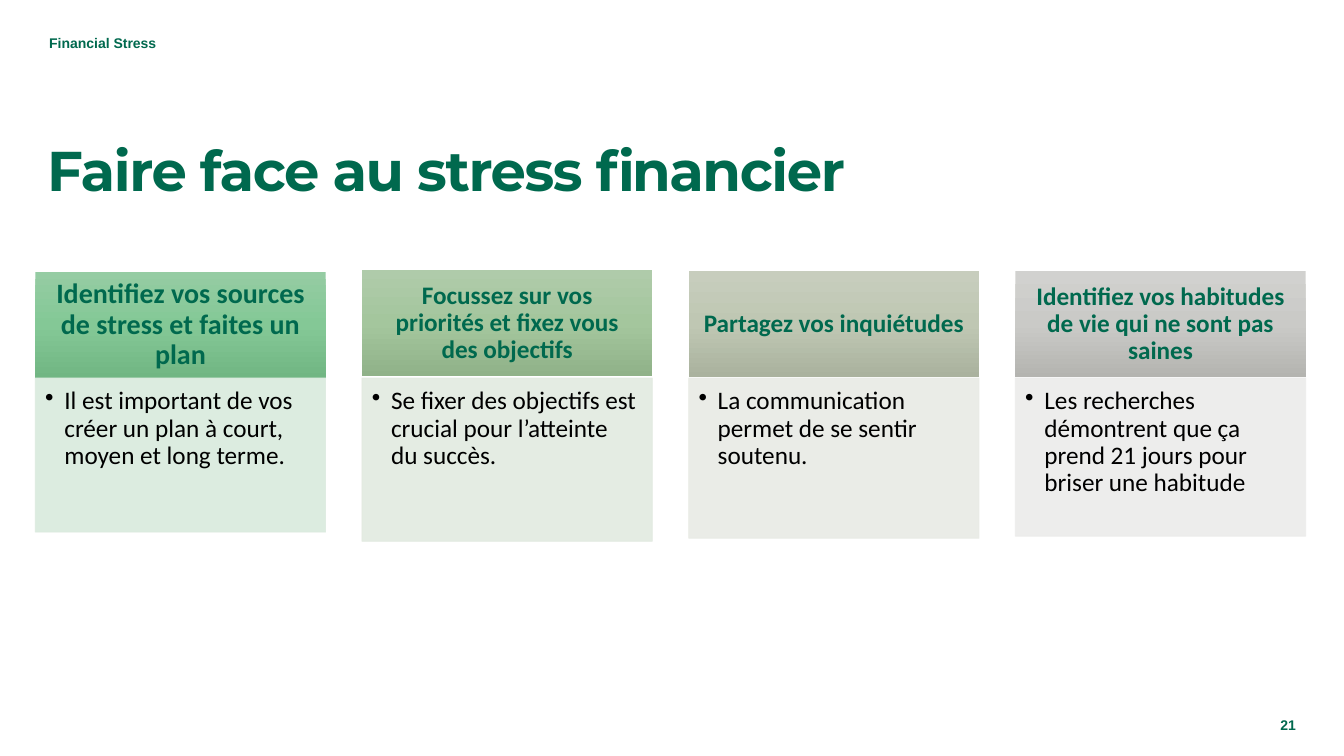
"""Build the slide on coping with financial stress."""
from pptx import Presentation
from pptx.dml.color import RGBColor
from pptx.enum.shapes import MSO_SHAPE
from pptx.enum.text import MSO_ANCHOR, PP_ALIGN
from pptx.oxml import parse_xml
from pptx.oxml.ns import nsdecls, qn
from pptx.util import Inches, Pt

THEME = {
    "green": "00694E", "black": "000000",
    "note": 10, "title": 40, "head": 18, "lead": 20, "body": 18,
    "sans": "Arial", "text": "Calibri", "show": "Montserrat",
    "tints": [
        (("95CCA3", "84C896", "71B683"), "D9EADD"),
        (("AFCBAA", "A4C69D", "90B289"), "E2EAE0"),
        (("C7CDBD", "BFC7B3", "AAB29E"), "E8EBE5"),
        (("D1D1CF", "CACAC7", "B4B4B0"), "ECECEB"),
    ],
}


def write(shape, text, size, face, color="green", bold=True, pads=(0.1, 0.05, 0.1, 0.05),
          anchor=MSO_ANCHOR.TOP, align=PP_ALIGN.LEFT, space=1.0, bullet=False):
    """Put one formatted paragraph in a shape."""
    frame = shape.text_frame
    frame.word_wrap = True
    frame.vertical_anchor = anchor
    for side, pad in zip(("left", "top", "right", "bottom"), pads):
        setattr(frame, f"margin_{side}", Inches(pad))
    para = frame.paragraphs[0]
    if bullet:
        props = para._p.get_or_add_pPr()
        props.set("marL", str(Inches(0.19)))
        props.set("indent", str(Inches(-0.19)))
        props.append(parse_xml(f'<a:buChar {nsdecls("a")} char="•"/>'))
    for name, value in {"alignment": align, "line_spacing": space}.items():
        setattr(para, name, value)
    run = para.add_run()
    run.text = text
    for name, value in {"size": Pt(THEME[size]), "name": THEME[face], "bold": bold}.items():
        setattr(run.font, name, value)
    run.font.color.rgb = RGBColor.from_string(THEME[color])
    return run


def place(kind, left, top, width, height):
    """Add a text box, or a rectangle without shadow."""
    area = [Inches(n) for n in (left, top, width, height)]
    if kind == "text":
        return slide.shapes.add_textbox(*area)
    shape = slide.shapes.add_shape(MSO_SHAPE.RECTANGLE, *area)
    shape.shadow.inherit = False
    return shape


deck = Presentation()
deck.slide_width, deck.slide_height = Inches(13.33), Inches(7.5)
slide = deck.slides.add_slide(deck.slide_layouts[6])

write(place("text", 0.39, 0.31, 6.27, 0.31), "Financial Stress", "note", "sans",
      pads=(0.1, 0.05, 0, 0), space=0.9)
write(place("text", 11.93, 7.07, 1.02, 0.25), "21", "note", "sans",
      anchor=MSO_ANCHOR.MIDDLE, align=PP_ALIGN.RIGHT)
title = write(place("text", 0.37, 0.62, 12.6, 1.44), "Faire face au stress financier",
              "title", "show", anchor=MSO_ANCHOR.BOTTOM)
title.font._element.set("spc", "-100")

cards = [
    ("Identifiez vos sources de stress et faites un plan", "lead", 2.7,
     "Il est important de vos créer un plan à court, moyen et long terme.", 1.53),
    ("Focussez sur vos priorités et fixez vous des objectifs", "head", 2.68,
     "Se fixer des objectifs est crucial pour l’atteinte du succès.", 1.62),
    ("Partagez vos inquiétudes", "head", 2.69,
     "La communication permet de se sentir soutenu.", 1.59),
    ("Identifiez vos habitudes de vie qui ne sont pas saines", "head", 2.69,
     "Les recherches démontrent que ça prend 21 jours pour briser une habitude", 1.57),
]
for col, (card, tint) in enumerate(zip(cards, THEME["tints"])):
    name, size, top, text, height = card
    shades, pale = tint
    left = 0.35 + 3.24 * col

    head = place("box", left, top, 2.88, 1.05)
    head.line.fill.background()
    head.fill.gradient()
    head.fill.gradient_angle = 270
    stops = head._element.spPr.find(qn("a:gradFill")).find(qn("a:gsLst"))
    stops.clear()
    for step, shade in enumerate(shades):
        stops.append(parse_xml(f'<a:gs {nsdecls("a")} pos="{step * 50000}">'
                               f'<a:srgbClr val="{shade}"/></a:gs>'))
    pad = (0.16, 0.09) if size == "lead" else (0.14, 0.08)
    write(head, name, size, "text", pads=pad * 2, anchor=MSO_ANCHOR.MIDDLE,
          align=PP_ALIGN.CENTER, space=0.9)

    body = place("box", left, 3.75, 2.88, height)
    body.fill.solid()
    body.line.width = Pt(0.5)
    for paint in (body.fill.fore_color, body.line.color):
        paint.rgb = RGBColor.from_string(pale)
    for tone in body._element.spPr.iter(qn("a:srgbClr")):
        tone.append(parse_xml(f'<a:alpha {nsdecls("a")} val="90000"/>'))
    write(body, text, "body", "text", "black", False, (0.1, 0.1, 0.14, 0.16),
          space=0.9, bullet=True)

deck.save("out.pptx")
